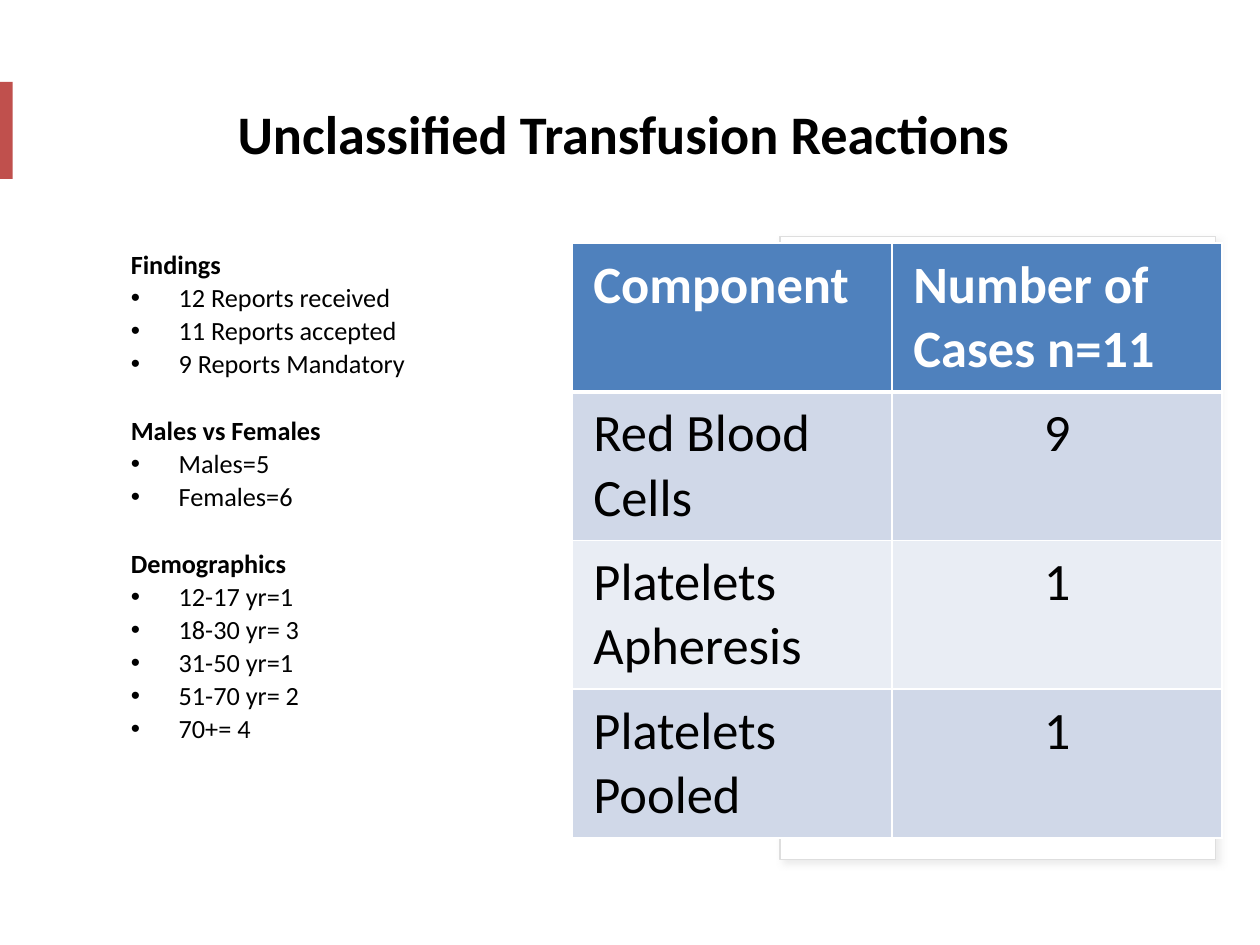
from dataclasses import dataclass

from lxml.etree import SubElement
from pptx import Presentation
from pptx.dml.color import RGBColor
from pptx.enum.shapes import MSO_SHAPE
from pptx.enum.text import MSO_ANCHOR, PP_ALIGN
from pptx.oxml.ns import qn
from pptx.util import Inches, Pt


@dataclass(frozen=True)
class Theme:
    font: str = "Calibri"
    ink: str = "000000"
    paper: str = "FFFFFF"
    accent: str = "C0504D"
    header: str = "4F81BD"
    bands: tuple = ("D0D8E8", "E9EDF4")
    panel_line: str = "DEDEDE"
    panel_shadow: str = "D9D9D9"
    title_size: float = 31
    body_size: float = 15
    table_size: float = 30


THEME = Theme()

FINDINGS = {
    "Findings": ["12 Reports received", "11 Reports accepted", "9 Reports Mandatory"],
    "Males vs Females": ["Males=5", "Females=6"],
    "Demographics": ["12-17 yr=1", "18-30 yr= 3", "31-50 yr=1", "51-70 yr= 2", "70+= 4"],
}
CASES = [
    ("Component", "Number of Cases n=11"),
    ("Red Blood Cells", "9"),
    ("Platelets Apheresis", "1"),
    ("Platelets Pooled", "1"),
]


def style(paragraph, size, color=THEME.ink, bold=False):
    for run in paragraph.runs:
        run.font.name = THEME.font
        run.font.size = Pt(size)
        run.font.bold = bold
        run.font.color.rgb = RGBColor.from_string(color)


def add_rectangle(slide, box, fill):
    rectangle = slide.shapes.add_shape(MSO_SHAPE.RECTANGLE, *map(Inches, box))
    rectangle.shadow.inherit = False
    rectangle.fill.solid()
    rectangle.fill.fore_color.rgb = RGBColor.from_string(fill)
    rectangle.line.fill.background()
    return rectangle


def add_title(slide, box):
    left, top, width, height = box
    add_rectangle(slide, (0, top + 0.2, 0.1, 0.77), THEME.accent)
    title = slide.shapes.add_textbox(*map(Inches, box)).text_frame
    title.word_wrap = True
    title.vertical_anchor = MSO_ANCHOR.MIDDLE
    heading = title.paragraphs[0]
    heading.text = "Unclassified Transfusion Reactions"
    heading.alignment = PP_ALIGN.CENTER
    style(heading, THEME.title_size, bold=True)


def add_panel(slide, box):
    panel = add_rectangle(slide, box, THEME.paper)
    panel.line.color.rgb = RGBColor.from_string(THEME.panel_line)
    panel.line.width = Pt(0.75)
    effects = panel._element.spPr.find(qn("a:effectLst"))
    shadow = SubElement(effects, qn("a:outerShdw"), blurRad=str(Pt(4)),
                        dist=str(Pt(3)), dir=str(45 * 60000), rotWithShape="0")
    color = SubElement(shadow, qn("a:srgbClr"), val=THEME.panel_shadow)
    SubElement(color, qn("a:alpha"), val="50000")


def add_bullet(paragraph):
    properties = paragraph._p.get_or_add_pPr()
    properties.set("marL", str(Inches(0.38)))
    properties.set("indent", str(-Inches(0.38)))
    SubElement(properties, qn("a:buFont"), typeface="Arial")
    SubElement(properties, qn("a:buChar"), char="•")


def add_findings(slide, box):
    findings = slide.shapes.add_textbox(*map(Inches, box)).text_frame
    findings.word_wrap = True
    line_gap, section_gap = Pt(2.7), Pt(21.9)
    paragraph = findings.paragraphs[0]
    for section, (heading, facts) in enumerate(FINDINGS.items()):
        for position, text in enumerate([heading, *facts]):
            if section or position:
                paragraph = findings.add_paragraph()
            paragraph.text = text
            paragraph.line_spacing = 0.9
            paragraph.space_before = section_gap if section and not position else line_gap
            style(paragraph, THEME.body_size, bold=not position)
            if position:
                add_bullet(paragraph)


def add_borders(cell, bottom_width):
    properties = cell._tc.get_or_add_tcPr()
    for side, width in (("L", 1), ("R", 1), ("T", 1), ("B", bottom_width)):
        border = SubElement(properties, qn(f"a:ln{side}"), w=str(Pt(width)))
        fill = SubElement(border, qn("a:solidFill"))
        SubElement(fill, qn("a:srgbClr"), val=THEME.paper)


def add_cases(slide, box):
    cases = slide.shapes.add_table(len(CASES), 2, *map(Inches, box)).table
    for column, width in zip(cases.columns, (2.54, 2.62)):
        column.width = Inches(width)
    for row, values in enumerate(CASES):
        is_header = row == 0
        fill = THEME.header if is_header else THEME.bands[(row - 1) % 2]
        for column, value in enumerate(values):
            cell = cases.cell(row, column)
            cell.margin_left = cell.margin_right = Inches(0.17)
            cell.margin_top = cell.margin_bottom = Inches(0.08)
            add_borders(cell, 3 if is_header else 1)
            cell.fill.solid()
            cell.fill.fore_color.rgb = RGBColor.from_string(fill)
            cell.text_frame.text = value
            paragraph = cell.text_frame.paragraphs[0]
            if column and not is_header:
                paragraph.alignment = PP_ALIGN.CENTER
            style(paragraph, THEME.table_size,
                  THEME.paper if is_header else THEME.ink, is_header)


def main():
    deck = Presentation()
    deck.slide_width, deck.slide_height = Inches(10), Inches(7.5)
    slide = deck.slides.add_slide(deck.slide_layouts[6])
    add_title(slide, (0.35, 0.45, 9.19, 1.21))
    add_panel(slide, (6.19, 1.88, 3.46, 4.94))
    add_findings(slide, (0.94, 1.95, 2.83, 4.33))
    add_cases(slide, (4.54, 1.93, 5.16, 4.72))
    deck.save("out.pptx")


if __name__ == "__main__":
    main()
